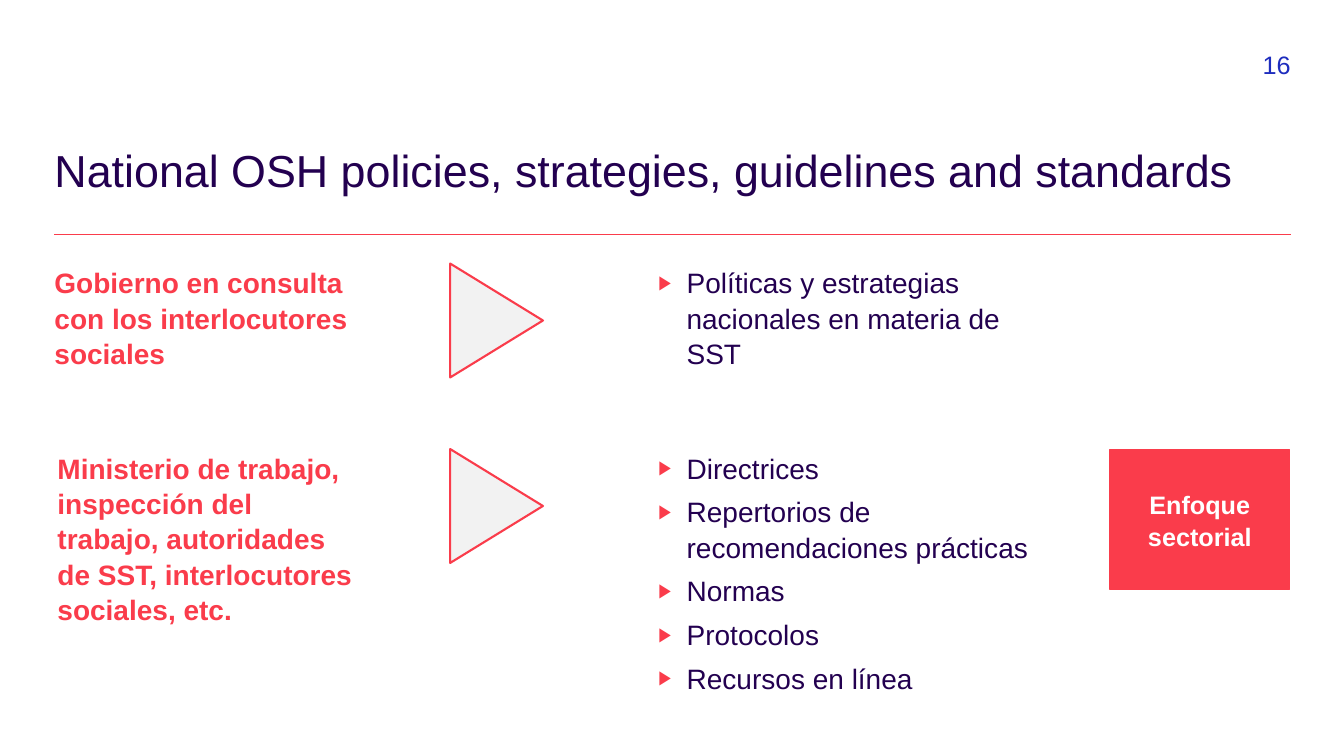
from dataclasses import dataclass

import pptx
import pptx.dml.color
import pptx.enum.shapes
import pptx.enum.text
import pptx.oxml
import pptx.oxml.ns
import pptx.shapes.autoshape
import pptx.slide
import pptx.text.text
import pptx.util
from pptx.util import Inches

Align = pptx.enum.text.PP_ALIGN
Anchor = pptx.enum.text.MSO_ANCHOR
Shape = pptx.enum.shapes.MSO_SHAPE


@dataclass(frozen=True)
class Theme:
    font: str = "Arial"
    red: str = "FA3C4B"
    navy: str = "230050"
    blue: str = "1E2DBE"
    grey: str = "F2F2F2"
    white: str = "FFFFFF"
    title: int = 32
    body: int = 20
    small: int = 18
    pitch: float = 1.05
    gap: int = 6


@dataclass(frozen=True)
class Row:
    top: float
    left: float
    actor: str
    width: float
    height: float
    items: tuple[str, ...]


THEME = Theme()
EDGE = 0.54
RIGHT = 12.8
ROWS = (
    Row(2.62, EDGE, "Gobierno en consulta con los interlocutores sociales", 3.73, 1.39,
        ("Políticas y estrategias nacionales en materia de SST",)),
    Row(4.46, 0.57,
        "Ministerio de trabajo, inspección del trabajo, autoridades de SST, "
        "interlocutores sociales, etc.", 3.98, 1.39,
        ("Directrices", "Repertorios de recomendaciones prácticas", "Normas",
         "Protocolos", "Recursos en línea")),
)


def rgb(code: str) -> pptx.dml.color.RGBColor:
    return pptx.dml.color.RGBColor.from_string(code)


def clear(frame: pptx.text.text.TextFrame) -> None:
    """Wrap the text and take away the insets."""
    frame.word_wrap = True
    frame.auto_size = pptx.enum.text.MSO_AUTO_SIZE.NONE
    frame.margin_left = frame.margin_right = 0
    frame.margin_top = frame.margin_bottom = 0


def write(para, text: str, size: int, color: str, bold: bool = False,
          align: Align = Align.LEFT, pitch: float = THEME.pitch) -> None:
    para.alignment = align
    para.line_spacing = pitch
    run = para.add_run()
    run.text = text
    run.font.name = THEME.font
    run.font.size = pptx.util.Pt(size)
    run.font.bold = bold
    run.font.color.rgb = rgb(color)


def bullet(para) -> None:
    props = para._p.get_or_add_pPr()
    props.set("marL", str(Inches(0.28)))
    props.set("indent", str(Inches(-0.28)))
    names = pptx.oxml.ns.nsdecls("a")
    for part in (
        f'<a:buClr {names}><a:srgbClr val="{THEME.red}"/></a:buClr>',
        f'<a:buSzPct {names} val="70000"/>',
        f'<a:buFont {names} typeface="{THEME.font}"/>',
        f'<a:buChar {names} char="▶"/>',
    ):
        props.append(pptx.oxml.parse_xml(part))


def box(slide: pptx.slide.Slide, left: float, top: float, width: float,
        height: float) -> pptx.text.text.TextFrame:
    frame = slide.shapes.add_textbox(
        Inches(left), Inches(top), Inches(width), Inches(height)).text_frame
    clear(frame)
    return frame


def block(slide: pptx.slide.Slide, kind: Shape, left: float, top: float, width: float,
          height: float, fill: str, line: float) -> pptx.shapes.autoshape.Shape:
    shape = slide.shapes.add_shape(
        kind, Inches(left), Inches(top), Inches(width), Inches(height))
    shape.shadow.inherit = False
    shape.fill.solid()
    shape.fill.fore_color.rgb = rgb(fill)
    shape.line.color.rgb = rgb(THEME.red)
    shape.line.width = pptx.util.Pt(line)
    return shape


def head(slide: pptx.slide.Slide) -> None:
    """Title, rule below it and page number."""
    title = slide.shapes.title
    title.left, title.top = Inches(EDGE), Inches(1.56)
    title.width, title.height = Inches(RIGHT - EDGE), Inches(0.79)
    clear(title.text_frame)
    title.text_frame.vertical_anchor = Anchor.TOP
    write(title.text_frame.paragraphs[0],
          "National OSH policies, strategies, guidelines and standards",
          THEME.title, THEME.navy, pitch=0.7)

    rule = slide.shapes.add_connector(
        pptx.enum.shapes.MSO_CONNECTOR.STRAIGHT,
        Inches(EDGE), Inches(2.33), Inches(RIGHT), Inches(2.33))
    rule.line.color.rgb = rgb(THEME.red)
    rule.line.width = pptx.util.Pt(0.5)
    names = pptx.oxml.ns.nsdecls("a")
    rule._element.spPr.append(pptx.oxml.parse_xml(f"<a:effectLst {names}/>"))

    page = box(slide, 12.21, 0.47, 0.59, 0.31)
    write(page.paragraphs[0], "16", THEME.small, THEME.blue, align=Align.RIGHT)


def draw(slide: pptx.slide.Slide, row: Row) -> None:
    """Actor, arrow and the list it leads to."""
    actor = box(slide, row.left, row.top, 3, row.height)
    write(actor.paragraphs[0], row.actor, THEME.body, THEME.red, bold=True)

    arrow = block(slide, Shape.ISOSCELES_TRIANGLE, 4.36, row.top + 0.1, 1.13, 0.92,
                  THEME.grey, 1.5)
    arrow.rotation = 90

    frame = box(slide, 6.53, row.top, row.width, row.height)
    for i, item in enumerate(row.items):
        para = frame.add_paragraph() if i else frame.paragraphs[0]
        bullet(para)
        if i:
            para.space_before = pptx.util.Pt(THEME.gap)
        write(para, item, THEME.body, THEME.navy)


def main() -> None:
    deck = pptx.Presentation()
    deck.slide_width, deck.slide_height = Inches(13.33), Inches(7.5)
    slide = deck.slides.add_slide(deck.slide_layouts.get_by_name("Title Only"))
    head(slide)
    for row in ROWS:
        draw(slide, row)

    focus = block(slide, Shape.RECTANGLE, 11.01, ROWS[1].top, 1.78, 1.39, THEME.red, 1)
    focus.text_frame.word_wrap = True
    focus.text_frame.vertical_anchor = Anchor.MIDDLE
    write(focus.text_frame.paragraphs[0], "Enfoque sectorial", THEME.small, THEME.white,
          bold=True, align=Align.CENTER)
    deck.save("out.pptx")


if __name__ == "__main__":
    main()
